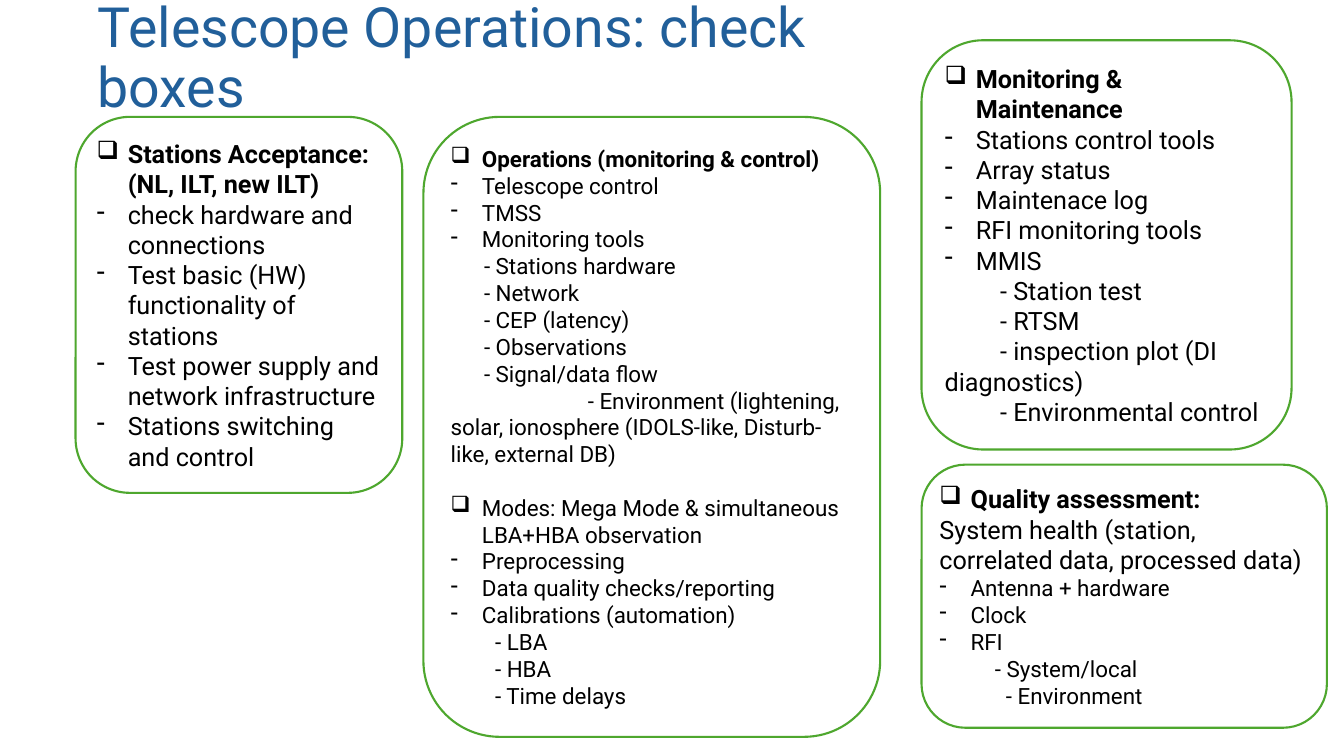
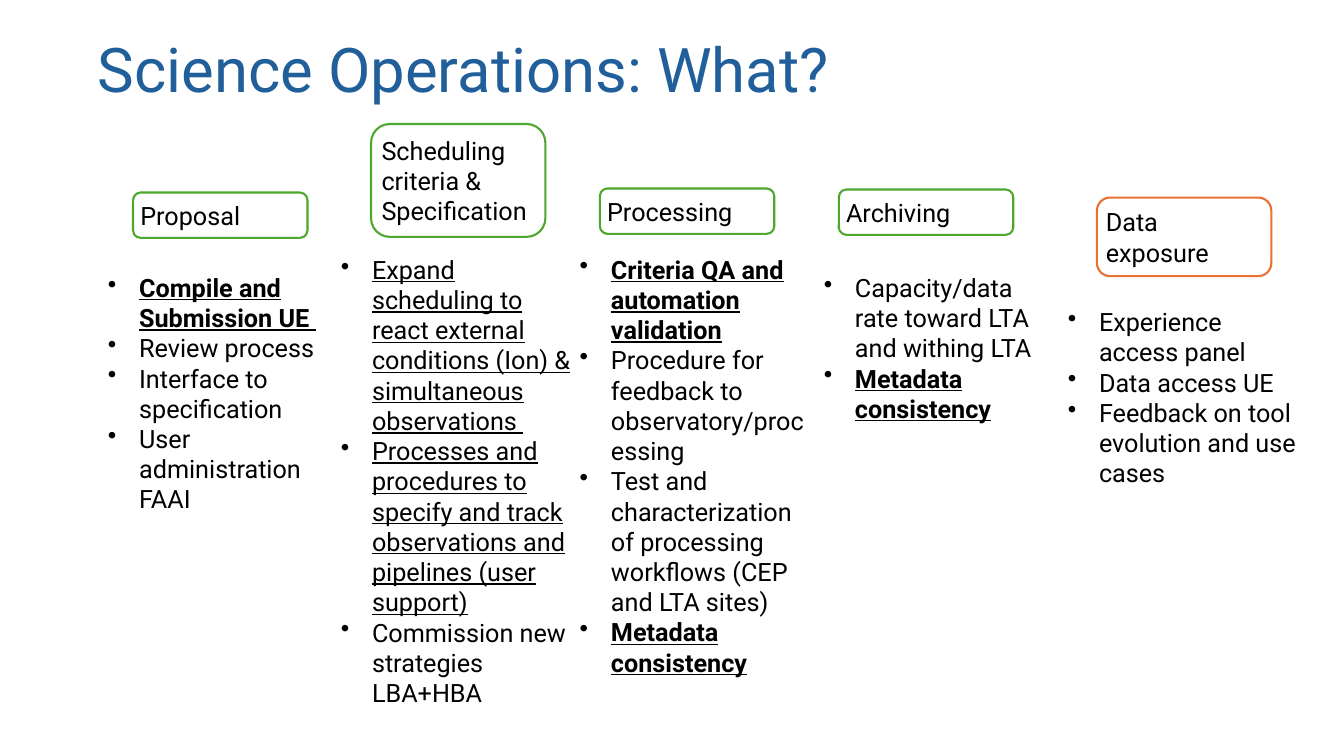
from dataclasses import dataclass

from lxml import etree
from pptx import Presentation
from pptx.dml.color import RGBColor
from pptx.enum.shapes import MSO_SHAPE
from pptx.enum.text import MSO_ANCHOR, PP_ALIGN
from pptx.oxml.ns import qn
from pptx.util import Pt

ROUNDED = MSO_SHAPE.ROUNDED_RECTANGLE
MIDDLE = MSO_ANCHOR.MIDDLE
TOP = MSO_ANCHOR.TOP
LEFT = PP_ALIGN.LEFT

EMU_PER_PX = 9144
FONT = "Roboto"
BLUE = "215F9A"
GREEN = "4EA72E"
ORANGE = "E97132"
BLACK = "000000"
WHITE = "FFFFFF"
INSET = 5
HANGING = 31
BODY_SIZE = 18
SMALL_SIZE = 16
STAGE_WIDTH = 173


@dataclass
class Line:
    text: str
    bullet: str = ""
    first_indent: int = 0
    size: float = BODY_SIZE
    bold: bool = False
    underline: bool = False
    color: str = BLACK
    space_before: int = 0
    spacing: float = 1.0


def px(length):
    return round(length * EMU_PER_PX)


def rgb(value):
    return RGBColor.from_string(value)


def check(text, **fmt):
    return Line(text, bullet="❑", **fmt)


def dash(text, **fmt):
    return Line(text, bullet="-", **fmt)


def dot(text, **fmt):
    return Line(text, bullet="•", **fmt)


def key_dot(text):
    return dot(text, bold=True, underline=True)


def sub(text, indent, **fmt):
    return Line("- " + text, first_indent=indent, **fmt)


def write_line(paragraph, line):
    paragraph.alignment = LEFT
    paragraph.line_spacing = line.spacing
    if line.space_before:
        paragraph.space_before = Pt(line.space_before)
    properties = paragraph._p.get_or_add_pPr()
    if line.bullet:
        properties.set("marL", str(px(HANGING)))
        properties.set("indent", str(-px(HANGING)))
        etree.SubElement(properties, qn("a:buChar")).set("char", line.bullet)
    elif line.first_indent:
        properties.set("marL", "0")
        properties.set("indent", str(px(line.first_indent)))
    run = paragraph.add_run()
    run.text = line.text
    run.font.name = FONT
    run.font.size = Pt(line.size)
    run.font.bold = line.bold
    run.font.underline = line.underline
    run.font.color.rgb = rgb(line.color)


def write_text(frame, lines, anchor=TOP):
    frame.word_wrap = True
    frame.vertical_anchor = anchor
    frame.margin_left = frame.margin_right = px(INSET)
    frame.margin_top = frame.margin_bottom = px(INSET)
    for number, line in enumerate(lines):
        paragraph = frame.add_paragraph() if number else frame.paragraphs[0]
        write_line(paragraph, line)


def add_text(slide, area, lines, anchor=TOP):
    box = slide.shapes.add_textbox(*map(px, area))
    write_text(box.text_frame, lines, anchor)


def add_title(slide, area, text, size):
    add_text(slide, area, [Line(text, size=size, color=BLUE, spacing=0.9)], MIDDLE)


def add_card(slide, area, lines, outline=GREEN):
    card = slide.shapes.add_shape(ROUNDED, *map(px, area))
    card.shadow.inherit = False
    card.fill.solid()
    card.fill.fore_color.rgb = rgb(WHITE)
    card.line.color.rgb = rgb(outline)
    card.line.width = Pt(1.5)
    write_text(card.text_frame, lines, MIDDLE)


def small(maker, *args, **fmt):
    return maker(*args, size=SMALL_SIZE, **fmt)


def build_telescope_operations(slide):
    add_card(slide, (75, 116, 324, 373), [
        check("Stations Acceptance: (NL, ILT, new ILT)", bold=True),
        dash("check hardware and connections"),
        dash("Test basic (HW) functionality of stations"),
        dash("Test power supply and network infrastructure"),
        dash("Stations switching and control"),
    ])
    monitored = ["Stations hardware", "Network", "CEP (latency)",
                 "Observations", "Signal/data flow"]
    add_card(slide, (420, 116, 453, 615), [
        small(check, "Operations (monitoring & control)", bold=True),
        *[small(dash, text) for text in ("Telescope control", "TMSS", "Monitoring tools")],
        *[small(sub, text, 33) for text in monitored],
        small(sub, "Environment (lightening, solar, ionosphere "
              "(IDOLS-like, Disturb-like, external DB)", 136),
        small(check, "Modes: Mega Mode & simultaneous LBA+HBA observation",
              space_before=19),
        *[small(dash, text) for text in ("Preprocessing", "Data quality checks/reporting",
                                         "Calibrations (automation)")],
        *[small(sub, text, 44) for text in ("LBA", "HBA", "Time delays")],
    ])
    add_card(slide, (914, 40, 367, 406), [
        check("Monitoring & Maintenance", bold=True),
        *[dash(text) for text in ("Stations control tools", "Array status",
                                  "Maintenace log", "RFI monitoring tools", "MMIS")],
        *[sub(text, 55) for text in ("Station test", "RTSM",
                                     "inspection plot (DI diagnostics)",
                                     "Environmental control")],
    ])
    add_card(slide, (914, 461, 402, 261), [
        check("Quality assessment:", bold=True),
        Line("System health (station, correlated data, processed data)"),
        *[small(dash, text) for text in ("Antenna + hardware", "Clock", "RFI")],
        small(sub, "System/local", 55),
        small(sub, "Environment", 66),
    ])
    add_title(slide, (92, 0, 810, 118), "Telescope Operations: check boxes", 39.6)


def build_science_operations(slide):
    add_title(slide, (92, 24, 1150, 95), "Science Operations: What?", 44)
    stages = [
        ("Proposal", (132, 191, 45), GREEN, (102, 265, 229, 252), [
            key_dot("Compile and Submission UE "),
            dot("Review process"),
            dot("Interface to specification"),
            dot("User administration FAAI"),
        ]),
        ("Scheduling criteria & Specification", (368, 123, 112), GREEN,
         (333, 247, 242, 525), [
            dot("Expand scheduling to react external conditions (Ion) & "
                "simultaneous observations ", underline=True),
            dot("Processes and procedures to specify and track observations "
                "and pipelines (user support)", underline=True),
            dot("Commission new strategies LBA+HBA"),
        ]),
        ("Processing", (595, 187, 45), GREEN, (570, 247, 242, 434), [
            key_dot("Criteria QA and automation validation"),
            dot("Procedure for feedback to observatory/processing"),
            dot("Test and characterization of processing workflows "
                "(CEP and LTA sites)"),
            key_dot("Metadata consistency"),
        ]),
        ("Archiving", (832, 188, 45), GREEN, (812, 265, 242, 192), [
            dot("Capacity/data rate toward LTA and withing LTA"),
            key_dot("Metadata consistency"),
        ]),
        ("Data exposure", (1088, 196, 78), ORANGE, (1054, 299, 242, 222), [
            dot("Experience access panel"),
            dot("Data access UE"),
            dot("Feedback on tool evolution and use cases"),
        ]),
    ]
    for name, (left, top, height), outline, tasks_area, tasks in stages:
        add_card(slide, (left, top, STAGE_WIDTH, height), [Line(name)], outline)
        add_text(slide, tasks_area, tasks)


def main():
    deck = Presentation()
    deck.slide_width = px(1333)
    deck.slide_height = px(750)
    blank = deck.slide_layouts[6]
    for build in (build_telescope_operations, build_science_operations):
        build(deck.slides.add_slide(blank))
    deck.save("out.pptx")


if __name__ == "__main__":
    main()
